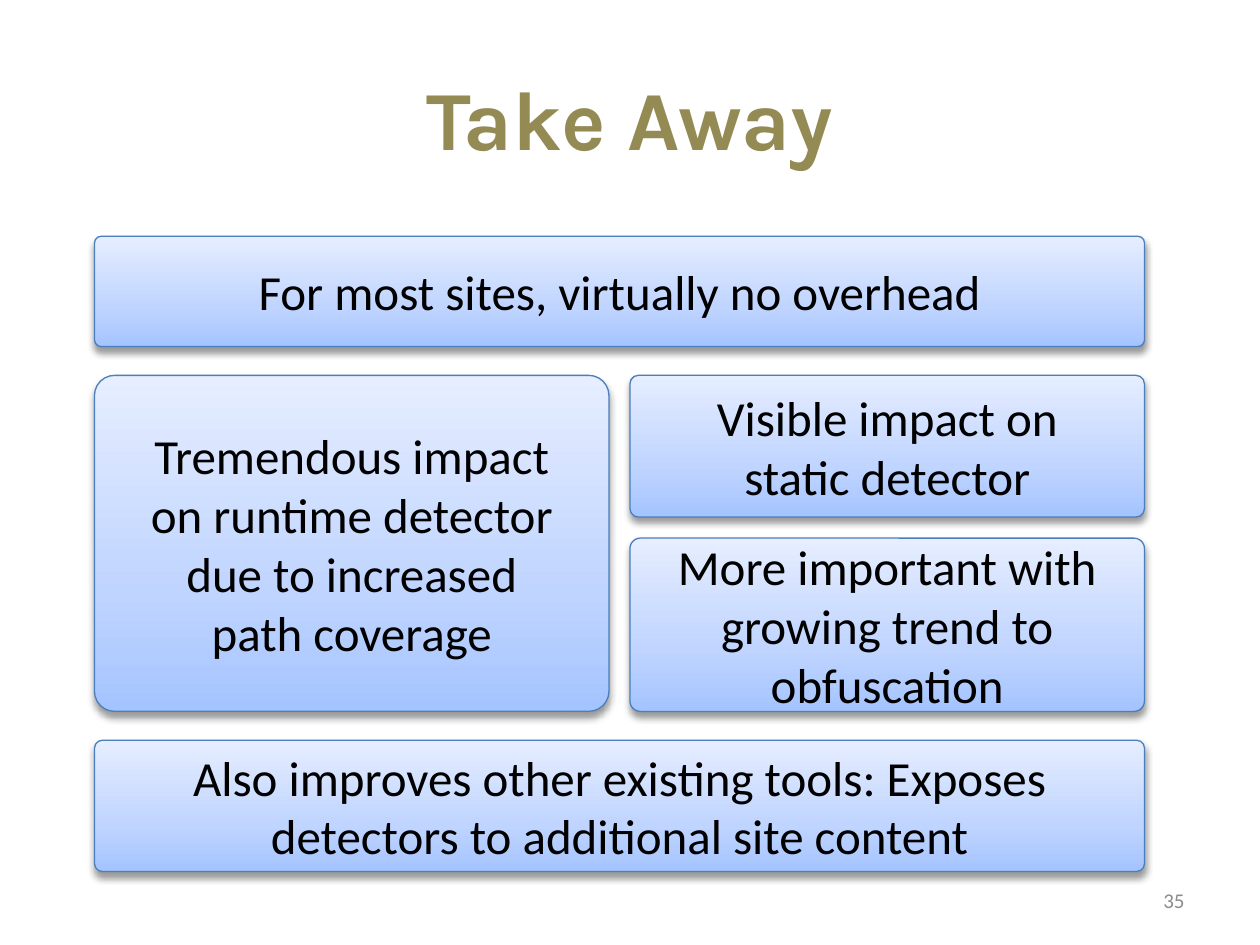
from lxml import etree
from pptx import Presentation
from pptx import util as u
from pptx.dml.color import RGBColor
from pptx.enum import shapes, text
from pptx.oxml import ns

PX = 9525  # EMU per px, 96 px to the inch
COLORS = {"title": "948A54", "text": "000000", "number": "8C8C8C", "border": "4B7EBC",
          "shadow": "000000", "bottom": "A4C4FF", "middle": "BFD4FF", "top": "E6EEFF"}
GRADIENT = [(0, "bottom"), (35, "middle"), (100, "top")]


def add_xml(parent, tag, **attributes):
    values = {name: str(value) for name, value in attributes.items()}
    return etree.SubElement(parent, ns.qn(tag), values)


class SlideBuilder:
    """Holds the slide and the style of its elements."""

    def __init__(self, slide):
        self.slide = slide

    def set_text(self, shape, lines, size, color, font="Calibri", align="CENTER", bold=False):
        frame = shape.text_frame
        frame.word_wrap = True
        frame.auto_size = text.MSO_AUTO_SIZE.NONE
        frame.vertical_anchor = text.MSO_ANCHOR.MIDDLE
        frame.text = "\n".join(lines)
        for paragraph in frame.paragraphs:
            paragraph.alignment = text.PP_ALIGN[align]
            paragraph.font.name = font
            paragraph.font.size = u.Pt(size)
            paragraph.font.bold = bold
            paragraph.font.color.rgb = RGBColor.from_string(COLORS[color])

    def title(self, words, left, top, width, height):
        shape = self.slide.shapes.title
        shape.left, shape.top, shape.width, shape.height = (
            length * PX for length in (left, top, width, height))
        self.set_text(shape, [words], 48, "title", font="Karla", bold=True)

    def slide_number(self, words, left, top, width, height):
        shape = self.slide.shapes.add_textbox(left * PX, top * PX, width * PX, height * PX)
        self.set_text(shape, [words], 12, "number", align="RIGHT")

    def card(self, lines, left, top, width, height):
        shape = self.slide.shapes.add_shape(shapes.MSO_SHAPE.ROUNDED_RECTANGLE,
                                            left * PX, top * PX, width * PX, height * PX)
        shape.adjustments[0] = 0.06
        shape.line.color.rgb = RGBColor.from_string(COLORS["border"])
        shape.line.width = u.Pt(0.75)
        self.fill_gradient(shape)
        self.drop_shadow(shape)
        self.set_text(shape, lines, 28, "text")

    def fill_gradient(self, shape):
        shape.fill.gradient()
        shape.fill.gradient_angle = 90
        stops = shape.element.spPr.find(".//" + ns.qn("a:gsLst"))
        for stop in list(stops):
            stops.remove(stop)
        for position, color in GRADIENT:
            stop = add_xml(stops, "a:gs", pos=position * 1000)
            add_xml(stop, "a:srgbClr", val=COLORS[color])

    def drop_shadow(self, shape):
        shape.shadow.inherit = False
        effects = shape.element.spPr.find(ns.qn("a:effectLst"))
        shadow = add_xml(effects, "a:outerShdw", blurRad=u.Pt(4), dist=u.Pt(3),
                         dir=5400000, rotWithShape=0)
        color = add_xml(shadow, "a:srgbClr", val=COLORS["shadow"])
        add_xml(color, "a:alpha", val=40000)


def main():
    presentation = Presentation()
    presentation.slide_width, presentation.slide_height = 960 * PX, 720 * PX
    builder = SlideBuilder(presentation.slides.add_slide(presentation.slide_layouts[5]))

    # Title and slide number
    builder.title("Take Away", 48, 29, 864, 120)
    builder.slide_number("35", 688, 667, 224, 38)

    # Cards: full-width rows around two columns
    left, full, gap = 72, 800, 16
    half = (full - gap) // 2
    right = left + half + gap
    middle_top, middle_height, upper_height = 286, 256, 108
    lower_top = middle_top + upper_height + gap
    lower_height = middle_height - upper_height - gap

    builder.card(["For most sites, virtually no overhead"], left, 180, full, 84)
    builder.card(["Tremendous impact", "on runtime detector due to increased", "path coverage"],
                 left, middle_top, half, middle_height)
    builder.card(["Visible impact on", "static detector"], right, middle_top, half, upper_height)
    builder.card(["More important with growing trend to obfuscation"],
                 right, lower_top, half, lower_height)
    builder.card(["Also improves other existing tools: Exposes detectors to additional site content"],
                 left, 564, full, 100)

    presentation.save("out.pptx")


if __name__ == "__main__":
    main()
